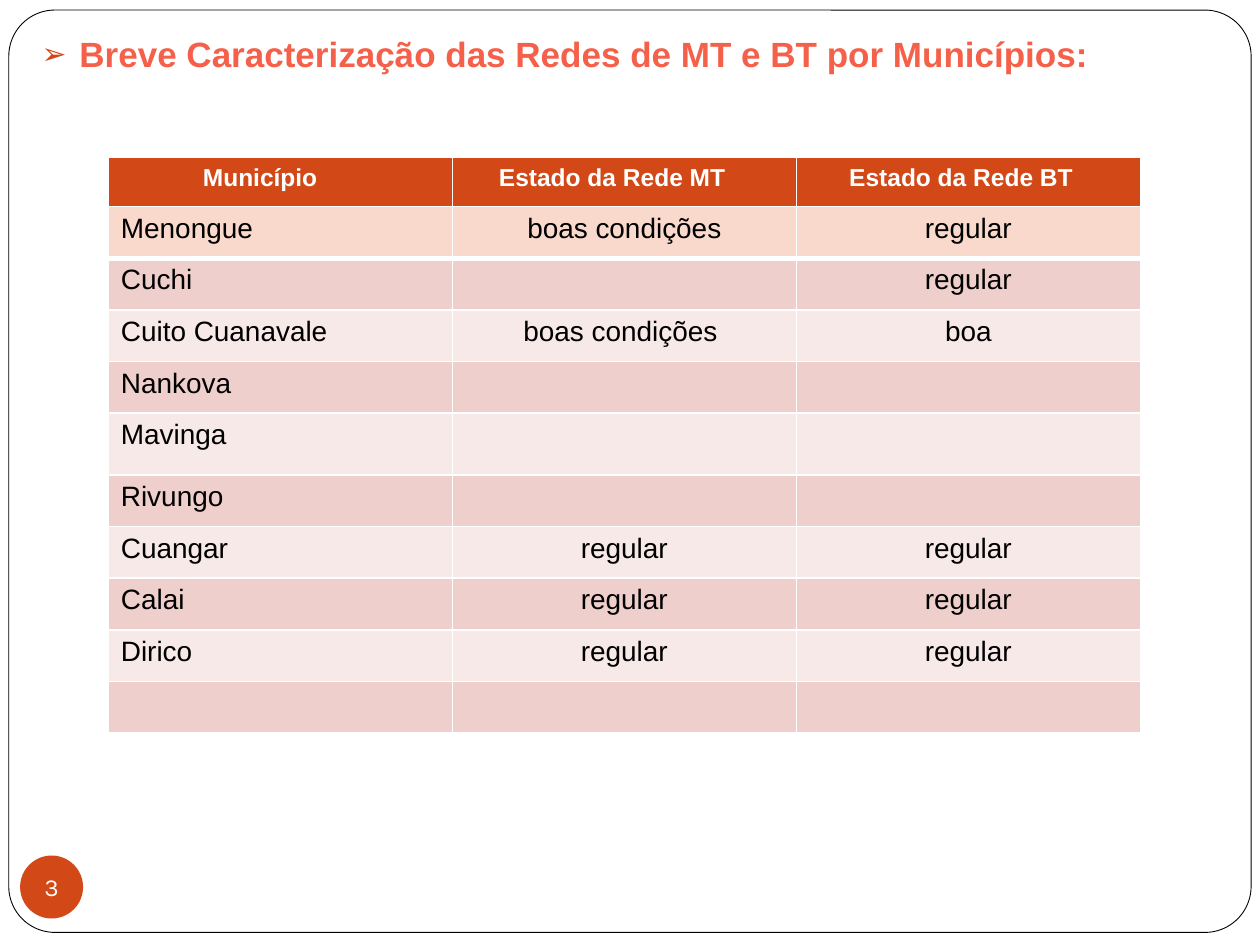
import pptx
import pptx.dml.color
import pptx.enum.shapes
import pptx.enum.text
import pptx.oxml
import pptx.oxml.ns
import pptx.util
from pptx.util import Inches

RGBColor = pptx.dml.color.RGBColor
ORANGE = RGBColor(0xD3, 0x48, 0x17)
CORAL = RGBColor(0xF5, 0x60, 0x4A)
PEACH = RGBColor(0xFA, 0xD9, 0xCD)
ROSE = RGBColor(0xEF, 0xCF, 0xCC)
PALE_ROSE = RGBColor(0xF7, 0xE9, 0xE8)
WHITE = RGBColor(0xFF, 0xFF, 0xFF)
BLACK = RGBColor(0, 0, 0)

SHAPES = pptx.enum.shapes.MSO_SHAPE
CENTER = pptx.enum.text.PP_ALIGN.CENTER
LEFT = pptx.enum.text.PP_ALIGN.LEFT

HEADING_FONT = {"name": "Arial", "size": pptx.util.Pt(20), "bold": True}
HEADER_FONT = {"name": "Arial", "size": pptx.util.Pt(14), "bold": True}
BODY_FONT = {"name": "Arial", "size": pptx.util.Pt(16), "bold": False}
NUMBER_FONT = {"name": "Karla", "size": pptx.util.Pt(14), "bold": False}

TABLE_LEFT, HEADER_TOP, BODY_TOP = 0.86, 1.25, 1.64
COLUMN_WIDTH, ROW_HEIGHT, TALL_ROW_HEIGHT = 2.73, 0.41, 0.49

# Each header label with its indent inside the cell
HEADERS = [("Município", 0.75), ("Estado da Rede MT", 0.37), ("Estado da Rede BT", 0.42)]
MUNICIPALITIES = [
    ("Menongue", "boas condições", "regular"),
    ("Cuchi", "", "regular"),
    ("Cuito Cuanavale", "boas condições ", "boa"),
    ("Nankova", "", ""),
    ("Mavinga", "", ""),
    ("Rivungo", "", ""),
    ("Cuangar", "regular", "regular"),
    ("Calai", "regular", "regular"),
    ("Dirico", "regular", "regular"),
    ("", "", ""),
]


def write(paragraph, text, font_values, color, alignment=LEFT):
    paragraph.alignment = alignment
    if not text:
        return
    run = paragraph.add_run()
    run.text = text
    for attribute, value in font_values.items():
        setattr(run.font, attribute, value)
    run.font.color.rgb = color


def add_outline_shape(slide, preset, left, top, width, height, fill):
    shape = slide.shapes.add_shape(
        preset, Inches(left), Inches(top), Inches(width), Inches(height))
    shape.shadow.inherit = False
    shape.fill.solid()
    shape.fill.fore_color.rgb = fill
    return shape


def add_frame(slide):
    frame = add_outline_shape(slide, SHAPES.ROUNDED_RECTANGLE, 0.07, 0.08, 9.86, 7.32, WHITE)
    frame.adjustments[0] = 0.05
    frame.line.color.rgb = BLACK
    frame.line.width = pptx.util.Pt(0.5)
    # Send behind the heading placeholder
    slide.shapes._spTree.insert(2, frame._element)


def add_heading(slide, text):
    title = slide.shapes.title
    title._element.getparent().remove(title._element)
    heading = slide.placeholders[1]
    box = {"left": 0.23, "top": 0.21, "width": 9.13, "height": 1.57}
    for attribute, value in box.items():
        setattr(heading, attribute, Inches(value))
    paragraph = heading.text_frame.paragraphs[0]
    properties = paragraph._p.get_or_add_pPr()
    properties.set("marL", str(Inches(0.3)))
    properties.set("indent", str(Inches(-0.3)))
    namespace = pptx.oxml.ns.nsdecls("a")
    for bullet in (
        f'<a:buClr {namespace}><a:srgbClr val="{ORANGE}"/></a:buClr>',
        f'<a:buSzPct {namespace} val="85000"/>',
        f'<a:buFont {namespace} typeface="Arial"/>',
        f'<a:buChar {namespace} char="➢"/>',
    ):
        properties.append(pptx.oxml.parse_xml(bullet))
    paragraph.space_before = pptx.util.Pt(0)
    write(paragraph, text, HEADING_FONT, CORAL)


def set_borders(cell, bottom_width):
    properties = cell._tc.get_or_add_tcPr()
    widths = {"lnL": 1, "lnR": 1, "lnT": 1, "lnB": bottom_width}
    for position, (side, width) in enumerate(widths.items()):
        properties.insert(position, pptx.oxml.parse_xml(
            f'<a:{side} {pptx.oxml.ns.nsdecls("a")} w="{pptx.util.Pt(width)}">'
            f'<a:solidFill><a:srgbClr val="{WHITE}"/></a:solidFill></a:{side}>'))


def style_cell(cell, fill, bottom_width=1):
    cell.fill.solid()
    cell.fill.fore_color.rgb = fill
    set_borders(cell, bottom_width)


def add_plain_table(slide, left, top, row_heights, column_count):
    table = slide.shapes.add_table(
        len(row_heights), column_count, Inches(left), Inches(top),
        Inches(COLUMN_WIDTH * column_count), Inches(sum(row_heights))).table
    table.first_row = False
    table.horz_banding = False
    for row, height in zip(table.rows, row_heights):
        row.height = Inches(height)
    return table


def add_header_cell(slide, column, label, indent):
    left = TABLE_LEFT + column * COLUMN_WIDTH
    cell = add_plain_table(slide, left, HEADER_TOP, [ROW_HEIGHT], 1).cell(0, 0)
    style_cell(cell, ORANGE, 3)
    cell.margin_left = Inches(indent)
    write(cell.text_frame.paragraphs[0], label, HEADER_FONT, WHITE)


def add_municipality_table(slide):
    heights = [TALL_ROW_HEIGHT if row[0] == "Mavinga" else ROW_HEIGHT
               for row in MUNICIPALITIES]
    table = add_plain_table(slide, TABLE_LEFT, BODY_TOP, heights, len(HEADERS))
    for row_index, values in enumerate(MUNICIPALITIES):
        if row_index == 0:
            fill, bottom_width = PEACH, 3
        else:
            fill, bottom_width = (ROSE if row_index % 2 else PALE_ROSE), 1
        for column, value in enumerate(values):
            cell = table.cell(row_index, column)
            style_cell(cell, fill, bottom_width)
            write(cell.text_frame.paragraphs[0], value, BODY_FONT, BLACK,
                  CENTER if column else LEFT)


def add_page_number(slide, number):
    badge = add_outline_shape(slide, SHAPES.OVAL, 0.16, 6.79, 0.5, 0.5, ORANGE)
    badge.line.fill.background()
    frame = badge.text_frame
    for side in ("left", "right", "top", "bottom"):
        setattr(frame, f"margin_{side}", 0)
    frame.word_wrap = False
    frame.vertical_anchor = pptx.enum.text.MSO_ANCHOR.MIDDLE
    write(frame.paragraphs[0], number, NUMBER_FONT, WHITE, CENTER)


def main():
    presentation = pptx.Presentation()
    presentation.slide_width = Inches(10)
    presentation.slide_height = Inches(7.5)
    slide = presentation.slides.add_slide(presentation.slide_layouts[1])

    # Background frame and heading
    add_frame(slide)
    add_heading(slide, "Breve Caracterização das Redes de MT e BT por Municípios:")

    # Header cells above the table of municipalities
    for column, (label, indent) in enumerate(HEADERS):
        add_header_cell(slide, column, label, indent)
    add_municipality_table(slide)

    add_page_number(slide, "3")
    presentation.save("out.pptx")


if __name__ == "__main__":
    main()
